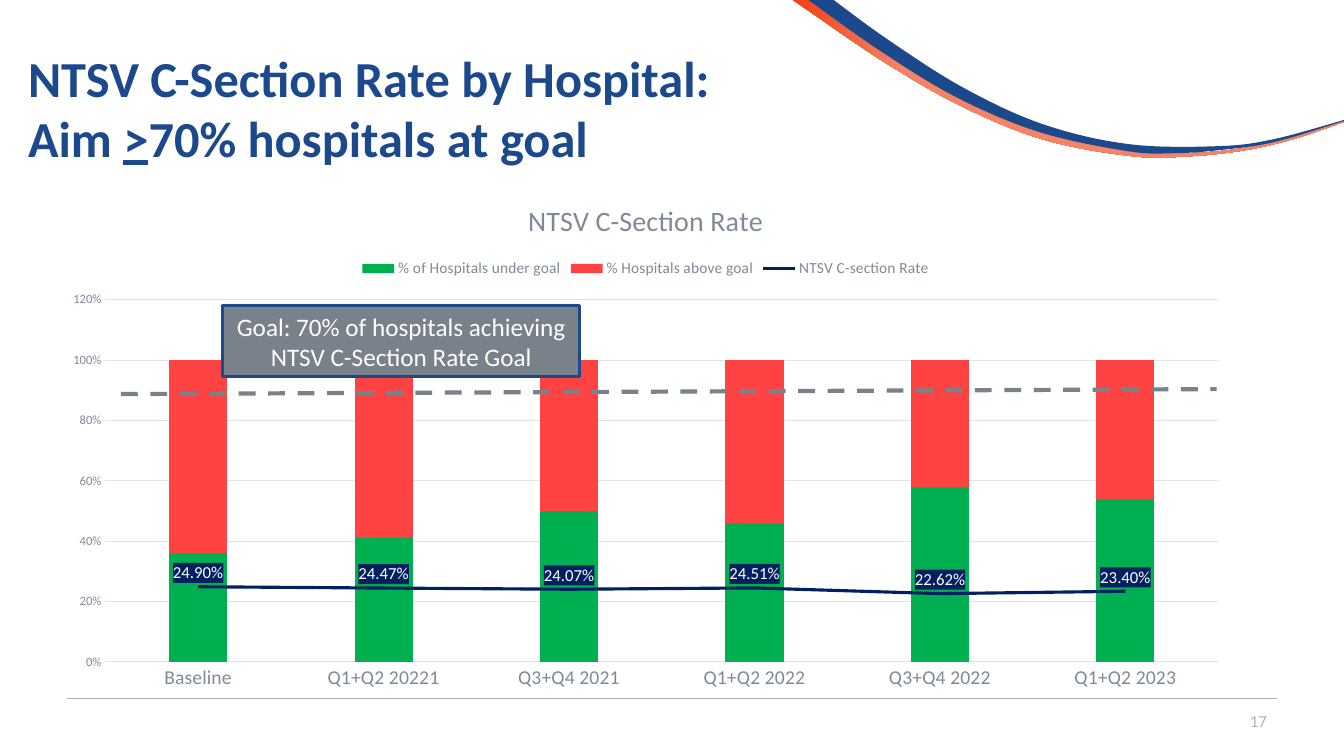
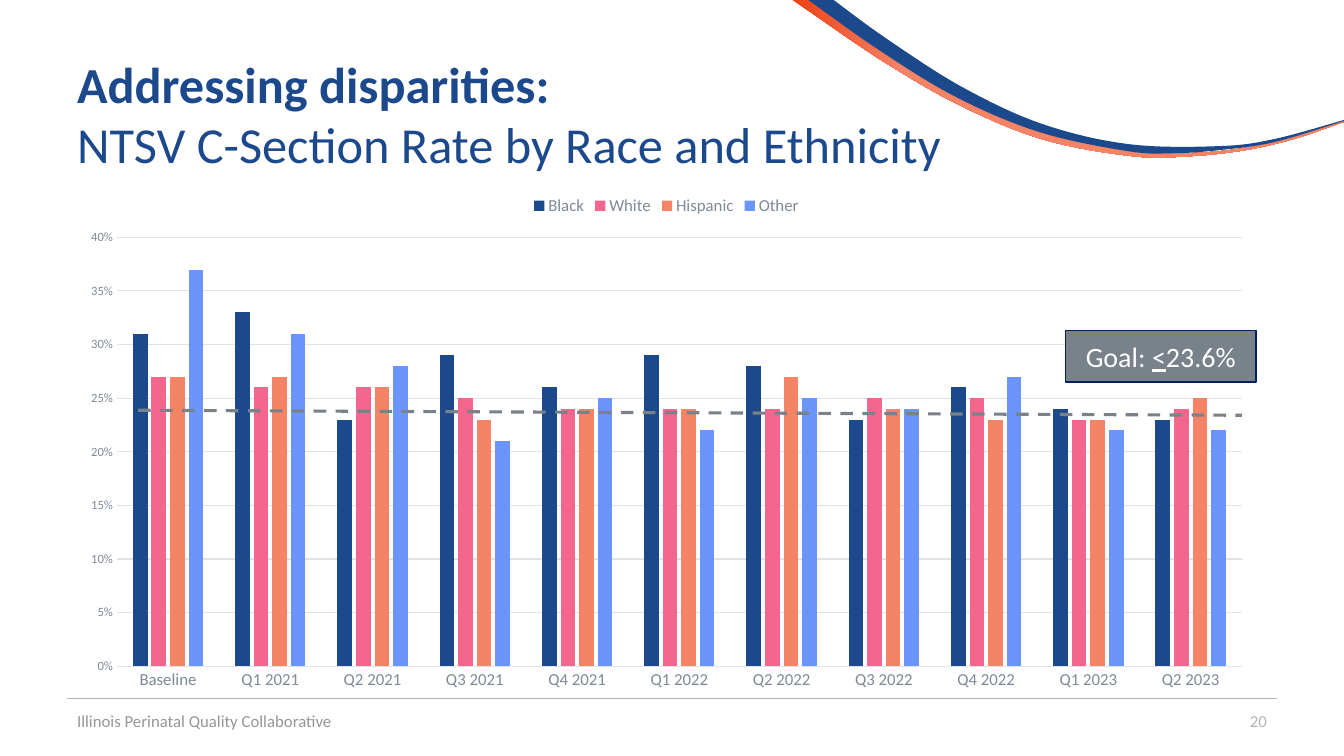
from pptx import Presentation
from pptx.chart.data import CategoryChartData
from pptx.dml.color import RGBColor
from pptx.enum.chart import XL_CHART_TYPE as ChartType, XL_LABEL_POSITION as LabelPosition
from pptx.enum.chart import XL_LEGEND_POSITION as LegendPosition, XL_MARKER_STYLE as MarkerStyle
from pptx.enum.chart import XL_TICK_MARK as TickMark
from pptx.enum.dml import MSO_LINE as Dash
from pptx.enum.shapes import MSO_CONNECTOR as Connector, MSO_SHAPE as Preset
from pptx.enum.text import MSO_ANCHOR as Anchor, PP_ALIGN as Align
from pptx.oxml import parse_xml
from pptx.oxml.ns import nsdecls, qn
from pptx.util import Inches, Pt
from lxml.etree import SubElement

WIDTH, HEIGHT = Inches(13.333), Inches(7.5)
FONT = "Calibri"
NAVY, DARK_NAVY, ORANGE, RED_ORANGE = "1C498B", "002060", "F58366", "EF4114"
GREEN, RED, PINK, SKY = "00B050", "FF4343", "F5668F", "6B95FD"
WHITE, SLATE, LABEL_GRAY, GRID_GRAY = "FFFFFF", "79818A", "7E8A98", "E1E4E7"
RULE_GRAY, FOOTER_GRAY = "AEB3B7", "949699"

ORANGE_UPPER = [(60.38, 0), (66.15, 7.2), (71.85, 13.2), (77.93, 17.73), (84.38, 20),
                (88.43, 20.27), (92.55, 19.6), (96.23, 18.13), (100, 16)]
ORANGE_LOWER = [(100, 16.13), (96.23, 18.4), (92.63, 19.87), (88.5, 20.67), (84.3, 20.67),
                (77.78, 18.53), (71.63, 14.13), (65.85, 8.27), (60.3, 1.6), (58.95, 0)]
NAVY_UPPER = [(62.03, 0), (65.93, 5.07), (71.55, 11.47), (77.55, 16.4), (84, 19.07),
              (90.68, 19.33), (94.8, 18.4), (100, 15.87)]
NAVY_LOWER = [(100, 16), (94.8, 18.8), (90.68, 19.87), (87.3, 20.27), (83.93, 20),
              (77.33, 17.47), (71.1, 12.8), (65.33, 6.53), (60.15, 0)]


def color(value):
    """Turn a hex string into a colour."""
    return RGBColor.from_string(value)


def across(percent):
    """Give a share of the slide's width."""
    return round(WIDTH * percent / 100)


def down(percent):
    """Give a share of the slide's height."""
    return round(HEIGHT * percent / 100)


def place(left, top, width, height):
    """Turn shares of the slide into a position and a size."""
    return across(left), down(top), across(width), down(height)


def style_line(line, value, width, dash=None):
    """Set the colour, width and dash of a line."""
    line.color.rgb = color(value)
    line.width = Pt(width)
    if dash:
        line.dash_style = dash


def style_font(font, size, value, bold=False, underline=False):
    """Set the typeface, size, colour and emphasis of a font."""
    font.name, font.size, font.color.rgb = FONT, Pt(size), color(value)
    font.bold, font.underline = bold, underline


def write(shape, paragraphs, size, value, align=Align.LEFT, bold=False):
    """Fill a shape with paragraphs made of (text, overrides) runs."""
    frame = shape.text_frame
    frame.word_wrap = True
    frame.vertical_anchor = Anchor.MIDDLE
    for index, runs in enumerate(paragraphs):
        paragraph = frame.add_paragraph() if index else frame.paragraphs[0]
        paragraph.alignment = align
        for text, overrides in runs:
            run = paragraph.add_run()
            run.text = text
            style_font(run.font, size, value, **{"bold": bold, **overrides})


def add_text(slide, box, paragraphs, **text_format):
    """Add a text box."""
    write(slide.shapes.add_textbox(*place(*box)), paragraphs, **text_format)


def add_title(slide, box, paragraphs):
    """Add a title in the shared style."""
    add_text(slide, box, paragraphs, size=36, value=NAVY, bold=True)


def add_goal_box(slide, box, runs, size, border, border_width):
    """Add a gray call-out that states the goal."""
    shape = slide.shapes.add_shape(Preset.RECTANGLE, *place(*box))
    shape.shadow.inherit = False
    shape.fill.solid()
    shape.fill.fore_color.rgb = color(SLATE)
    style_line(shape.line, border, border_width)
    write(shape, [runs], size, WHITE, Align.CENTER)


def add_line(slide, start, end, value, width, dash=None):
    """Add a straight line between two points."""
    line = slide.shapes.add_connector(Connector.STRAIGHT, across(start[0]), down(start[1]),
                                      across(end[0]), down(end[1]))
    style_line(line.line, value, width, dash)
    SubElement(line._element.spPr, qn("a:effectLst"))


def smooth_edge(anchors, steps=8):
    """Sample a smooth curve that runs through the anchors."""
    padded = [anchors[0], *anchors, anchors[-1]]
    points = [anchors[0]]
    for before, start, end, after in zip(padded, padded[1:], padded[2:], padded[3:]):
        for step in range(1, steps + 1):
            t = step / steps
            points.append(tuple(
                (2 * b + (c - a) * t + (2 * a - 5 * b + 4 * c - d) * t ** 2
                 + (3 * b - a - 3 * c + d) * t ** 3) / 2
                for a, b, c, d in zip(before, start, end, after)))
    return points


def add_ribbon(slide, upper, lower):
    """Add a curved band between two edges and return its fill."""
    points = [(across(x), max(0, down(y))) for x, y in smooth_edge(upper) + smooth_edge(lower)]
    builder = slide.shapes.build_freeform(*points[0])
    builder.add_line_segments(points[1:], close=True)
    ribbon = builder.convert_to_shape()
    ribbon.shadow.inherit = False
    ribbon.line.fill.background()
    return ribbon.fill


def add_frame(presentation, number):
    """Add a slide with the ribbons, the bottom rule and the page number."""
    slide = presentation.slides.add_slide(presentation.slide_layouts[6])
    fill = add_ribbon(slide, ORANGE_UPPER, ORANGE_LOWER)
    fill.gradient()
    fill.gradient_angle = 0
    for stop, position, value in zip(fill.gradient_stops, (0, 0.2), (RED_ORANGE, ORANGE)):
        stop.position, stop.color.rgb = position, color(value)
    fill = add_ribbon(slide, NAVY_UPPER, NAVY_LOWER)
    fill.solid()
    fill.fore_color.rgb = color(NAVY)
    add_line(slide, (5, 92.4), (95, 92.4), RULE_GRAY, 0.75)
    add_text(slide, (72.5, 92.67, 22.5, 5.33), [[(number, {})]],
             size=12, value=RULE_GRAY, align=Align.RIGHT)
    return slide


def add_rate_chart(slide, box, kind, categories, series, top, step, overlap,
                   category_size, legend_size):
    """Add a column chart of percentages; series holds (name, colour, values)."""
    data = CategoryChartData(number_format="0%")
    data.categories = categories
    for name, _, values in series:
        data.add_series(name, values)
    chart = slide.shapes.add_chart(kind, *place(*box), data).chart
    style_font(chart.font, 10, LABEL_GRAY)
    chart.has_title = False
    chart.has_legend = True
    chart.legend.position = LegendPosition.TOP
    chart.legend.include_in_layout = False
    style_font(chart.legend.font, legend_size, LABEL_GRAY)
    for axis, size in ((chart.category_axis, category_size), (chart.value_axis, 9)):
        axis.major_tick_mark = axis.minor_tick_mark = TickMark.NONE
        style_font(axis.tick_labels.font, size, LABEL_GRAY)
    style_line(chart.category_axis.format.line, GRID_GRAY, 0.75)
    values_axis = chart.value_axis
    values_axis.format.line.fill.background()
    style_line(values_axis.major_gridlines.format.line, GRID_GRAY, 0.75)
    values_axis.minimum_scale, values_axis.maximum_scale = 0, top
    values_axis.major_unit = step
    values_axis.tick_labels.number_format = "0%"
    values_axis.tick_labels.number_format_is_linked = False
    plot = chart.plots[0]
    plot.gap_width, plot.overlap, plot.vary_by_categories = 219, overlap, False
    for columns, (_, value, _) in zip(plot.series, series):
        columns.format.fill.solid()
        columns.format.fill.fore_color.rgb = color(value)
        columns.invert_if_negative = False
    return chart


def add_chart_title(chart, text):
    """Give a chart a title."""
    frame = chart.chart_title.text_frame
    frame.text = text
    style_font(frame.paragraphs[0].runs[0].font, 20, LABEL_GRAY)


def turn_last_series_into_line(chart, value):
    """Draw the last column series as a labelled line on the same axes."""
    bars = chart.plots[0]._element
    series = bars.findall(qn("c:ser"))[-1]
    for tag in ("c:invertIfNegative", "c:spPr"):
        for child in series.findall(qn(tag)):
            series.remove(child)
    line_chart = parse_xml(
        f'<c:lineChart {nsdecls("c")}><c:grouping val="standard"/>'
        '<c:varyColors val="0"/><c:marker val="1"/></c:lineChart>')
    line_chart.insert(2, series)
    for axis in bars.findall(qn("c:axId")):
        SubElement(line_chart, qn("c:axId")).set("val", axis.get("val"))
    bars.addnext(line_chart)
    line = chart.plots[1].series[0]
    style_line(line.format.line, value, 2.25)
    line.smooth = False
    line.marker.style = MarkerStyle.NONE
    labels = line.data_labels
    labels.show_value = True
    labels.position = LabelPosition.ABOVE
    labels.number_format, labels.number_format_is_linked = "0.00%", False
    style_font(labels.font, 12, WHITE)
    labels._element.find(qn("c:numFmt")).addnext(parse_xml(
        f'<c:spPr {nsdecls("c", "a")}><a:solidFill><a:srgbClr val="{value}"/>'
        '</a:solidFill></c:spPr>'))


def build_hospital_slide(presentation):
    """Build the slide on rates by hospital."""
    slide = add_frame(presentation, "17")
    chart = add_rate_chart(
        slide, (3.68, 23.87, 88.73, 68.8), ChartType.COLUMN_STACKED_100,
        ["Baseline", "Q1+Q2 20221", "Q3+Q4 2021", "Q1+Q2 2022", "Q3+Q4 2022", "Q1+Q2 2023"],
        [("% of Hospitals under goal", GREEN, [0.36, 0.41, 0.5, 0.46, 0.58, 0.54]),
         ("% Hospitals above goal", RED, [0.64, 0.59, 0.5, 0.54, 0.42, 0.46]),
         ("NTSV C-section Rate", DARK_NAVY, [0.249, 0.2447, 0.2407, 0.2451, 0.2262, 0.234])],
        top=1.2, step=0.2, overlap=100, category_size=14, legend_size=11)
    add_chart_title(chart, "NTSV C-Section Rate")
    turn_last_series_into_line(chart, DARK_NAVY)
    add_title(slide, (1.35, 4.53, 55.8, 19.33),
              [[("NTSV C-Section Rate by Hospital: Aim ", {}), (">", {"underline": True}),
                ("70% hospitals at goal", {})]])
    add_goal_box(slide, (16.58, 40.4, 26.55, 9.47),
                 [("Goal: 70% of hospitals achieving NTSV C-Section Rate Goal", {})],
                 18, NAVY, 2.25)
    add_line(slide, (9, 52.13), (90.53, 51.47), SLATE, 3, Dash.DASH)


def build_disparities_slide(presentation):
    """Build the slide on rates by race and ethnicity."""
    slide = add_frame(presentation, "20")
    quarters = [f"Q{quarter} {year}" for year in (2021, 2022, 2023) for quarter in range(1, 5)]
    add_rate_chart(
        slide, (5, 24.4, 89.18, 68.27), ChartType.COLUMN_CLUSTERED,
        ["Baseline", *quarters[:10]],
        [("Black", NAVY, [0.31, 0.33, 0.23, 0.29, 0.26, 0.29, 0.28, 0.23, 0.26, 0.24, 0.23]),
         ("White", PINK, [0.27, 0.26, 0.26, 0.25, 0.24, 0.24, 0.24, 0.25, 0.25, 0.23, 0.24]),
         ("Hispanic", ORANGE, [0.27, 0.27, 0.26, 0.23, 0.24, 0.24, 0.27, 0.24, 0.23, 0.23, 0.25]),
         ("Other", SKY, [0.37, 0.31, 0.28, 0.21, 0.25, 0.22, 0.25, 0.24, 0.27, 0.22, 0.22])],
        top=0.4, step=0.05, overlap=-27, category_size=12, legend_size=12)
    add_title(slide, (5, 5.33, 90, 19.33),
              [[("Addressing disparities:", {})],
               [("NTSV C-Section Rate by Race and Ethnicity", {"bold": False})]])
    add_text(slide, (5, 92.67, 33.75, 5.33), [[("Illinois Perinatal Quality Collaborative", {})]],
             size=12, value=FOOTER_GRAY)
    add_line(slide, (10.28, 54.27), (92.4, 54.93), SLATE, 2.25, Dash.DASH)
    add_goal_box(slide, (79.28, 43.73, 14.18, 6.8),
                 [("Goal: ", {}), ("<", {"underline": True}), ("23.6%", {})], 20, DARK_NAVY, 1)


def main():
    """Build and save the presentation."""
    presentation = Presentation()
    presentation.slide_width, presentation.slide_height = WIDTH, HEIGHT
    build_hospital_slide(presentation)
    build_disparities_slide(presentation)
    presentation.save("out.pptx")


if __name__ == "__main__":
    main()
